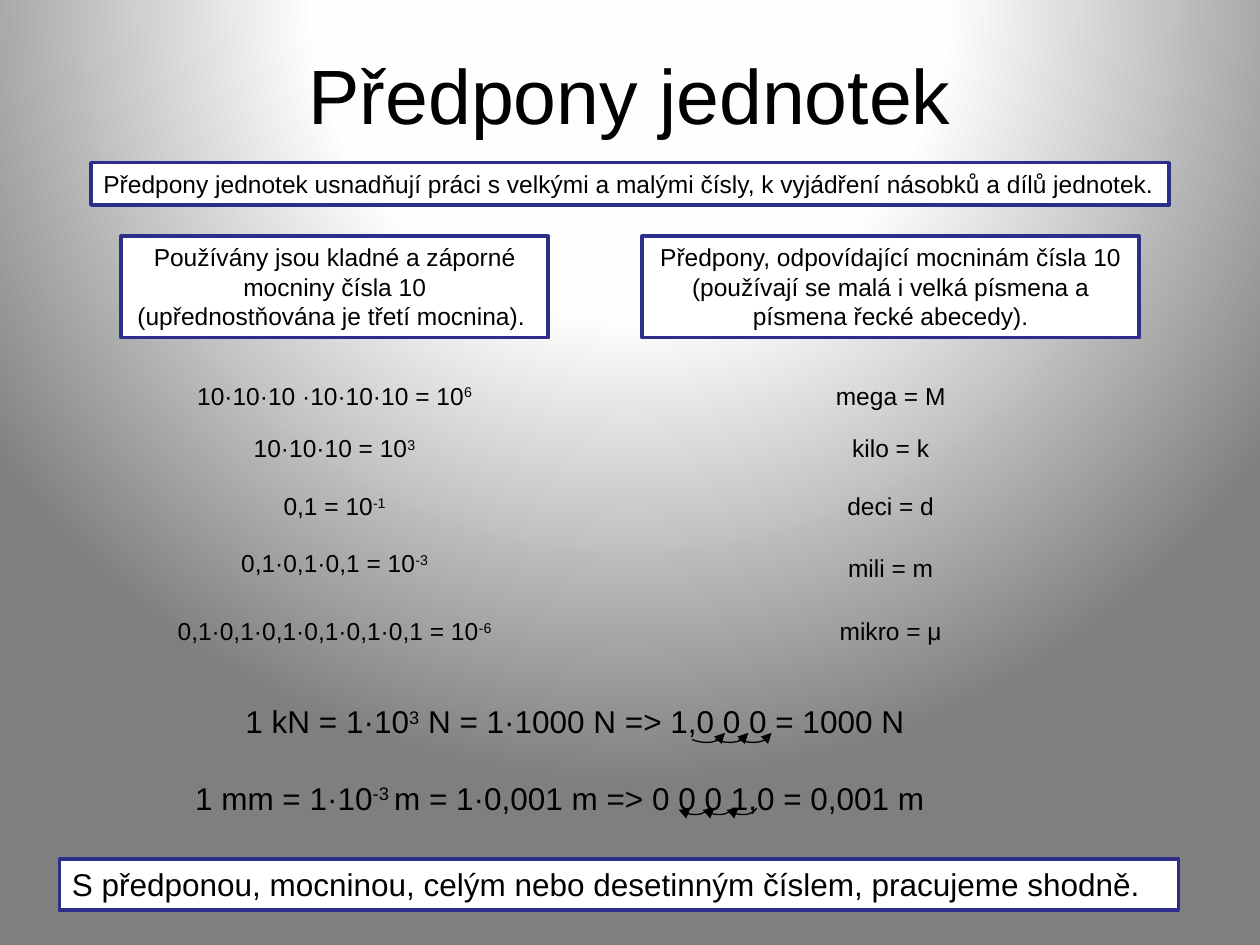
from dataclasses import dataclass

from lxml.etree import SubElement
from pptx import Presentation
from pptx.dml.color import RGBColor
from pptx.enum.shapes import MSO_SHAPE as Preset
from pptx.enum.text import MSO_ANCHOR as Anchor, MSO_AUTO_SIZE as AutoSize, PP_ALIGN as Align
from pptx.oxml import parse_xml
from pptx.oxml.ns import nsdecls, qn
from pptx.util import Pt


@dataclass(frozen=True)
class Theme:
    """Colours, font and type sizes of the slide."""
    font: str = "Arial"
    ink: str = "000000"
    paper: str = "FFFFFF"
    border: str = "2D2D8A"
    glow: tuple = ((0, "FFFFFF"), (40, "FEFEFE"), (100, "7F7F7F"))
    title: int = 44
    large: int = 18
    small: int = 14


THEME = Theme()
LEFT_CENTRE, RIGHT_CENTRE, ROW_HEIGHT = 191.2, 509, 24.2

BOXES = (
    ((52, 93, 616, 24.2), THEME.small, Align.LEFT,
     ["Předpony jednotek usnadňují práci s velkými a malými čísly, k vyjádření násobků a dílů jednotek."]),
    ((367, 135, 284, 58), THEME.small, Align.CENTER,
     ["Předpony, odpovídající mocninám čísla 10",
      "(používají se malá i velká písmena a písmena řecké abecedy)."]),
    ((69.3, 135, 244, 58), THEME.small, Align.CENTER,
     ["Používány jsou kladné a záporné mocniny čísla 10",
      "(upřednostňována je třetí mocnina). "]),
    ((34, 491, 639.5, 29), THEME.large, Align.LEFT,
     ["S předponou, mocninou, celým nebo desetinným číslem, pracujeme shodně."]),
)

POWERS = (
    (214, 220, "10·10·10 ·10·10·10 = 10^6"),
    (244, 138, "10·10·10 = 10^3"),
    (277, 90, "0,1 = 10^-1"),
    (309.6, 138, "0,1·0,1·0,1 = 10^-3"),
    (348.5, 232, "0,1·0,1·0,1·0,1·0,1·0,1 = 10^-6"),
)
PREFIXES = (
    (214, 79, "mega = M"),
    (244, 69, "kilo = k"),
    (277, 69, "deci = d"),
    (312.5, 69, "mili = m"),
    (348.5, 84, "mikro = μ"),
)

EXAMPLES = (
    dict(text="1 kN = 1·10^3^ N = 1·1000 N => 1,0 0 0 = 1000 N", frame=(133.2, 397.6, 393, 29),
         first=388.8, step=13.3, top=396.7, size=(20.9, 32.4), turn=111.3, tip="a:headEnd"),
    dict(text="1 mm = 1·10^-3 ^m = 1·0,001 m => 0 0 0 1,0 = 0,001 m", frame=(104.4, 441.4, 453.6, 29),
         first=383, step=13.7, top=440, size=(19.4, 28.8), turn=120.9, tip="a:tailEnd"),
)


def assign(target, values):
    """Set each named attribute of the target."""
    for name, value in values.items():
        setattr(target, name, value)


def paint_background(page):
    """Give the page its round gradient."""
    stops = "".join(f'<a:gs pos="{place * 1000}"><a:srgbClr val="{colour}"/></a:gs>'
                    for place, colour in THEME.glow)
    page.element.cSld.insert(0, parse_xml(
        f'<p:bg {nsdecls("p", "a")}><p:bgPr><a:gradFill rotWithShape="1"><a:gsLst>{stops}</a:gsLst>'
        '<a:path path="circle"><a:fillToRect l="50000" t="-80000" r="50000" b="180000"/></a:path>'
        '</a:gradFill><a:effectLst/></p:bgPr></p:bg>'))


def write(shape, lines, size, align, anchor=Anchor.TOP, fit=AutoSize.SHAPE_TO_FIT_TEXT):
    """Fill a shape with lines in which carets enclose raised text."""
    frame = shape.text_frame
    assign(frame, dict(word_wrap=True, auto_size=fit, vertical_anchor=anchor))
    for index, line in enumerate(lines):
        para = frame.add_paragraph() if index else frame.paragraphs[0]
        para.alignment = align
        for part, text in enumerate(line.split("^")):
            span = para.add_run()
            span.text = text
            assign(span.font, dict(name=THEME.font, size=Pt(size)))
            span.font.color.rgb = RGBColor.from_string(THEME.ink)
            if part % 2:
                span.font._element.set("baseline", "30000")


def outline(shape, colour, width):
    """Draw a plain line round a shape without a shadow."""
    shape.shadow.inherit = False
    shape.line.color.rgb = RGBColor.from_string(colour)
    shape.line.width = Pt(width)


def add_title(page, text):
    """Place the title."""
    title = page.shapes.title
    assign(title, dict(left=Pt(36), top=Pt(21.6), width=Pt(648), height=Pt(64)))
    write(title, [text], THEME.title, Align.CENTER, Anchor.MIDDLE, AutoSize.NONE)


def add_box(page, frame, size, align, lines):
    """Add a framed white statement."""
    box = page.shapes.add_shape(Preset.RECTANGLE, *map(Pt, frame))
    box.fill.solid()
    box.fill.fore_color.rgb = RGBColor.from_string(THEME.paper)
    outline(box, THEME.border, 2)
    write(box, lines, size, align)


def add_label(shapes, frame, text, size, align):
    """Add a line of unframed text."""
    write(shapes.add_textbox(*map(Pt, frame)), [text], size, align)


def add_column(page, centre, rows):
    """Add labels centred on one vertical axis."""
    for top, width, text in rows:
        add_label(page.shapes, (centre - width / 2, top, width, ROW_HEIGHT),
                  text, THEME.small, Align.CENTER)


def add_hop(shapes, frame, turn, tip):
    """Add a curved arrow for one move of the decimal comma."""
    hop = shapes.add_shape(Preset.ARC, *map(Pt, frame))
    hop.rotation = turn
    hop.fill.background()
    outline(hop, THEME.ink, 0.75)
    SubElement(hop.line._get_or_add_ln(), qn(tip), type="triangle")


def add_example(page, text, frame, first, step, top, size, turn, tip):
    """Add a worked conversion with its three hops."""
    group = page.shapes.add_group_shape()
    add_label(group.shapes, frame, text, THEME.large, Align.LEFT)
    for index in range(3):
        add_hop(group.shapes, (first + index * step, top, *size), turn, tip)


def main():
    """Build and save the slide."""
    deck = Presentation()
    assign(deck, dict(slide_width=Pt(720), slide_height=Pt(540)))
    page = deck.slides.add_slide(deck.slide_layouts[5])
    paint_background(page)
    add_title(page, "Předpony jednotek")
    for box in BOXES:
        add_box(page, *box)
    add_column(page, LEFT_CENTRE, POWERS)
    add_column(page, RIGHT_CENTRE, PREFIXES)
    for example in EXAMPLES:
        add_example(page, **example)
    deck.save("out.pptx")


if __name__ == "__main__":
    main()
